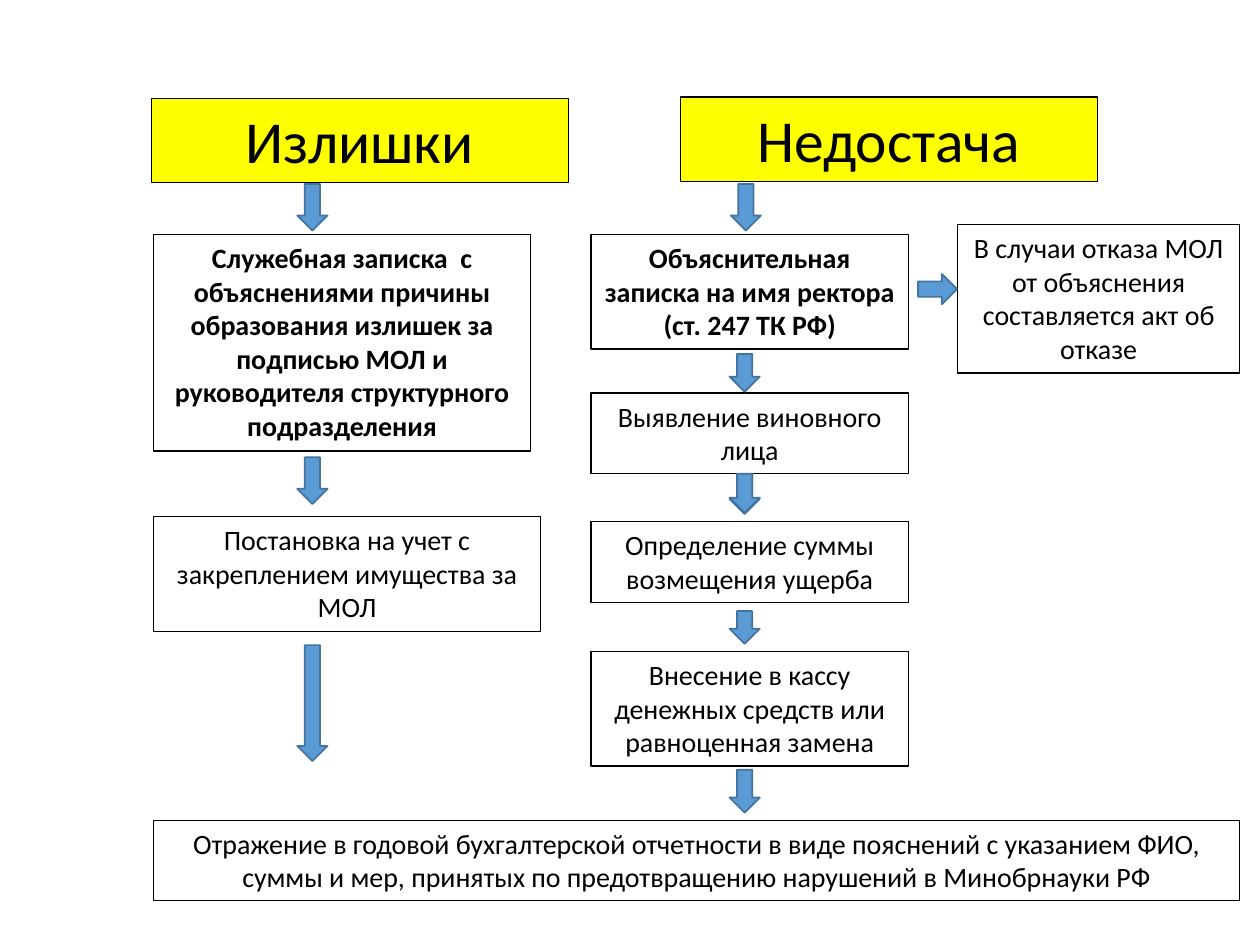
import pptx
import pptx.dml.color
import pptx.enum.shapes
import pptx.enum.text
import pptx.util

PX = 9144  # EMU in one px, 100 px to the inch


class Theme:
    font = "Calibri"
    ink = "000000"
    head = "FFFF00"
    arrow = "5B9BD5"
    edge = "43739E"
    title = 34
    body = 16
    thin = 0.75
    thick = 1


LEFT, MID, RIGHT = 122, 469, 984
STEP = RIGHT - LEFT
MID_W = 252
ARROW_W = 24

HEADS = [
    ("Излишки", 120, 78),
    ("Недостача", 540, 77),
]

# text, left, top, width, height, bold
BOXES = [
    ("Служебная записка  с объяснениями причины образования излишек за "
     "подписью МОЛ и руководителя структурного подразделения",
     LEFT, 186, 299, 172, True),
    ("Постановка на учет с закреплением имущества за МОЛ",
     LEFT, 410, 307, 91, False),
    ("Объяснительная записка на имя ректора\n(ст. 247 ТК РФ)",
     MID, 186, MID_W, 91, True),
    ("В случаи отказа МОЛ от объяснения составляется акт об отказе",
     760, 178, RIGHT - 760, 118, False),
    ("Выявление виновного лица", MID, 312, MID_W, 64, False),
    ("Определение суммы возмещения ущерба", MID, 414, MID_W, 64, False),
    ("Внесение в кассу денежных средств или равноценная замена",
     MID, 517, MID_W, 91, False),
    ("Отражение в годовой бухгалтерской отчетности в виде пояснений "
     "с указанием ФИО, суммы и мер, принятых по предотвращению нарушений "
     "в Минобрнауки РФ",
     LEFT, 651, STEP, 64, False),
]

# left of the column: (top, height) of each arrow
ARROWS = {
    236: [(146, 37), (363, 37), (512, 92)],
    580: [(146, 37)],
    579: [(281, 30), (377, 31), (376, 31), (485, 26), (611, 34)],
}


def color(code):
    return pptx.dml.color.RGBColor.from_string(code)


def paint(shape, fill, line, width):
    if fill:
        shape.fill.solid()
        shape.fill.fore_color.rgb = color(fill)
    else:
        shape.fill.background()
    shape.line.color.rgb = color(line)
    shape.line.width = pptx.util.Pt(width)


def add_box(slide, text, place, size, bold=False, fill=None):
    box = slide.shapes.add_textbox(*[n * PX for n in place])
    paint(box, fill, Theme.ink, Theme.thin)
    frame = box.text_frame
    frame.word_wrap = True
    frame.auto_size = pptx.enum.text.MSO_AUTO_SIZE.SHAPE_TO_FIT_TEXT
    frame.text = text
    for par in frame.paragraphs:
        par.alignment = pptx.enum.text.PP_ALIGN.CENTER
        par.font.name = Theme.font
        par.font.size = pptx.util.Pt(size)
        par.font.bold = bold
        par.font.color.rgb = color(Theme.ink)


def add_arrow(slide, left, top, height, turn=0):
    kind = pptx.enum.shapes.MSO_SHAPE.DOWN_ARROW
    place = (left, top, ARROW_W, height)
    arrow = slide.shapes.add_shape(kind, *[n * PX for n in place])
    arrow.shadow.inherit = False
    arrow.rotation = turn
    paint(arrow, Theme.arrow, Theme.edge, Theme.thick)


def main():
    deck = pptx.Presentation()
    deck.slide_width = 1000 * PX
    deck.slide_height = 750 * PX
    slide = deck.slides.add_slide(deck.slide_layouts[6])
    for text, left, top in HEADS:
        add_box(slide, text, (left, top, 331, 67), Theme.title,
                fill=Theme.head)
    for text, *place, bold in BOXES:
        add_box(slide, text, place, Theme.body, bold)
    for left, spans in ARROWS.items():
        for top, height in spans:
            add_arrow(slide, left, top, height)
    add_arrow(slide, 732, 214, 31, turn=270)
    deck.save("out.pptx")


if __name__ == "__main__":
    main()
